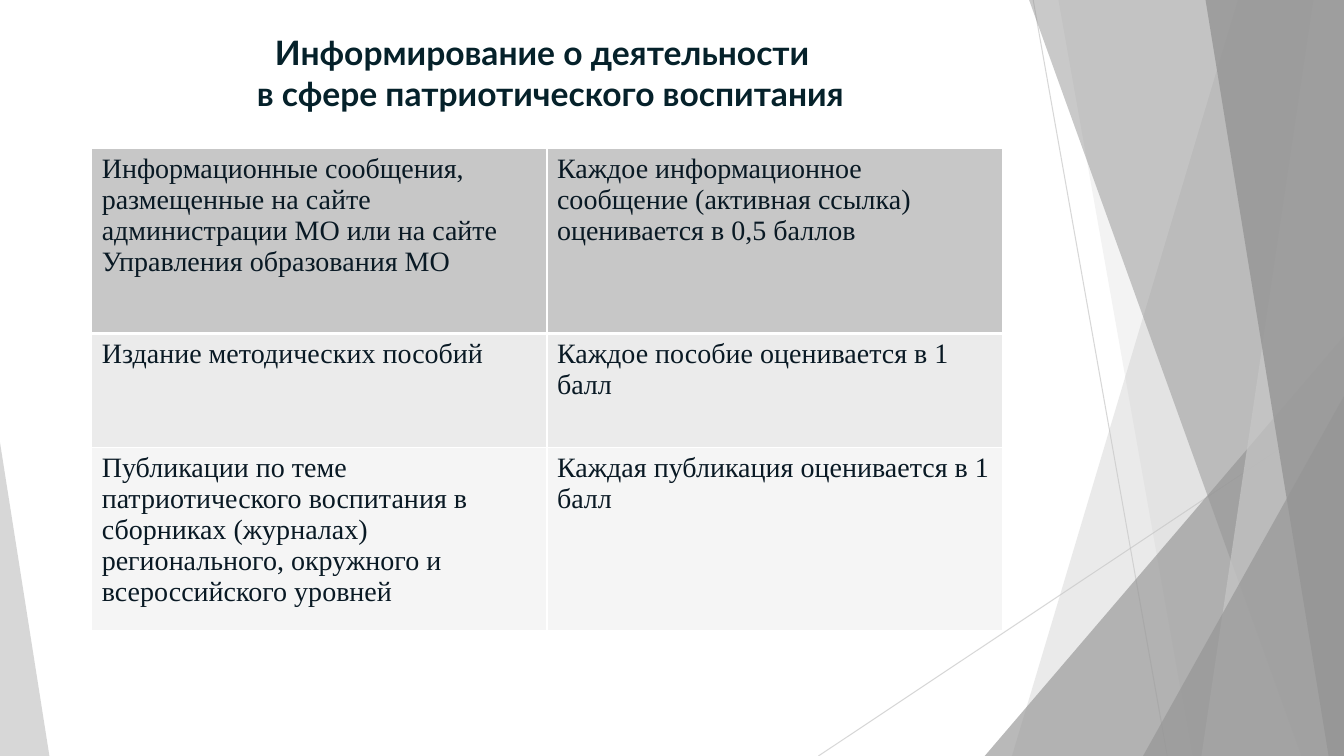
"""Builds a slide with a scoring table beside a faceted grey decoration."""
from lxml.etree import SubElement
from pptx import Presentation
from pptx.dml.color import RGBColor as Rgb
from pptx.enum.shapes import MSO_CONNECTOR as Connector, MSO_SHAPE as Preset
from pptx.enum.text import MSO_ANCHOR as Anchor, PP_ALIGN as Align
from pptx.oxml.ns import qn
from pptx.util import Pt

HEADING = ["Информирование о деятельности ", " в сфере патриотического воспитания"]
CRITERIA = [
    ("Информационные сообщения, размещенные на сайте администрации МО или на сайте Управления образования МО",
     "Каждое информационное сообщение (активная ссылка) оценивается в 0,5 баллов"),
    ("Издание методических пособий",
     "Каждое пособие оценивается в 1 балл"),
    ("Публикации по теме патриотического воспитания в сборниках (журналах) регионального, окружного и всероссийского уровней",
     "Каждая публикация оценивается в 1 балл"),
]
THEME = {
    "light": "C7C7C7", "dark": "959595", "border": "FFFFFF",
    "rows": ["C7C7C7", "EBEBEB", "F5F5F5"],
    "heading": ("Lato", 24, "05212A", True),
    "body": ("Times New Roman", 20, "091924", False),
}
WIDTH, HEIGHT = 960, 540
RAYS = [((738, 0), (833.8, HEIGHT)), ((WIDTH, 290), (584.6, HEIGHT))]
FACETS = [
    ("band", 884.2, 722.9, "light", 36),
    ("band", 756, 851.8, "light", 20),
    ("corner", 703.4, 240, "dark", 66),
    ("band", 735.1, 929.5, "dark", 50),
    ("band", 938.2, 858.2, "light", 70),
    ("band", 861.1, 949, "dark", 80),
    ("corner", 816.5, 283, "dark", 66),
]
LEFT_CORNER = (35.3, 316.1)
TABLE_LEFT, TABLE_TOP, COLUMN_WIDTH = 65.5, 106, 325.2
ROW_HEIGHTS = [132.2, 81.4, 130.9]
RULES = [1, 3, 1, 1]


def set_alpha(color_parent, percent):
    color = next(color_parent.iter(qn("a:srgbClr")))
    SubElement(color, qn("a:alpha")).set("val", str(percent * 1000))


def paint(facet, color, percent):
    facet.shadow.inherit = False
    facet.line.fill.background()
    facet.fill.solid()
    facet.fill.fore_color.rgb = Rgb.from_string(THEME[color])
    set_alpha(facet._element.spPr, percent)


def add_corner(shapes, left, top, right, apex):
    corner = shapes.add_shape(Preset.ISOSCELES_TRIANGLE, Pt(left), Pt(top),
                              Pt(right - left), Pt(HEIGHT - top))
    corner.adjustments[0] = apex
    return corner


def add_band(shapes, top_x, bottom_x):
    outline = shapes.build_freeform(Pt(top_x), 0)
    outline.add_line_segments([(Pt(WIDTH), 0), (Pt(WIDTH), Pt(HEIGHT)),
                               (Pt(bottom_x), Pt(HEIGHT))], close=True)
    return outline.convert_to_shape()


def add_decoration(shapes):
    for start, end in RAYS:
        ray = shapes.add_connector(Connector.STRAIGHT, *map(Pt, start + end))
        ray.line.color.rgb = Rgb.from_string(THEME["light"])
        ray.line.width = Pt(0.75)
        set_alpha(ray._element.spPr, 70)
        SubElement(ray._element.spPr, qn("a:effectLst"))
    for kind, first, second, color, percent in FACETS:
        if kind == "band":
            facet = add_band(shapes, first, second)
        else:
            facet = add_corner(shapes, first, second, WIDTH, 1)
        paint(facet, color, percent)
    right, top = LEFT_CORNER
    paint(add_corner(shapes, 0, top, right, 0), "light", 70)


def write(paragraph, wording, style):
    run = paragraph.add_run()
    run.text = wording
    face, size, color, bold = THEME[style]
    run.font.name, run.font.size, run.font.bold = face, Pt(size), bold
    run.font.color.rgb = Rgb.from_string(color)


def add_borders(cell, top, bottom):
    properties = cell._tc.get_or_add_tcPr()
    sides = [("a:lnL", 1), ("a:lnR", 1), ("a:lnT", top), ("a:lnB", bottom)]
    for position, (side, width) in enumerate(sides):
        border = SubElement(properties, qn(side), w=str(Pt(width)))
        fill = SubElement(border, qn("a:solidFill"))
        SubElement(fill, qn("a:srgbClr"), val=THEME["border"])
        properties.insert(position, border)


def add_criteria(shapes):
    columns = len(CRITERIA[0])
    table = shapes.add_table(len(CRITERIA), columns, Pt(TABLE_LEFT), Pt(TABLE_TOP),
                             Pt(COLUMN_WIDTH * columns), Pt(sum(ROW_HEIGHTS))).table
    for column in table.columns:
        column.width = Pt(COLUMN_WIDTH)
    for index, criterion in enumerate(CRITERIA):
        table.rows[index].height = Pt(ROW_HEIGHTS[index])
        for cell, wording in zip(table.rows[index].cells, criterion):
            cell.fill.solid()
            cell.fill.fore_color.rgb = Rgb.from_string(THEME["rows"][index])
            add_borders(cell, *RULES[index:index + 2])
            write(cell.text_frame.paragraphs[0], wording, "body")


def add_heading(shapes):
    frame = shapes.add_textbox(Pt(51.8), Pt(19.4), Pt(676.8), Pt(56.2)).text_frame
    frame.word_wrap = True
    frame.vertical_anchor = Anchor.TOP
    paragraph = frame.paragraphs[0]
    paragraph.alignment = Align.CENTER
    for index, wording in enumerate(HEADING):
        if index:
            paragraph.add_line_break()
        write(paragraph, wording, "heading")


def main():
    deck = Presentation()
    deck.slide_width, deck.slide_height = Pt(WIDTH), Pt(HEIGHT)
    shapes = deck.slides.add_slide(deck.slide_layouts[6]).shapes
    add_decoration(shapes)
    add_criteria(shapes)
    add_heading(shapes)
    deck.save("out.pptx")


if __name__ == "__main__":
    main()
